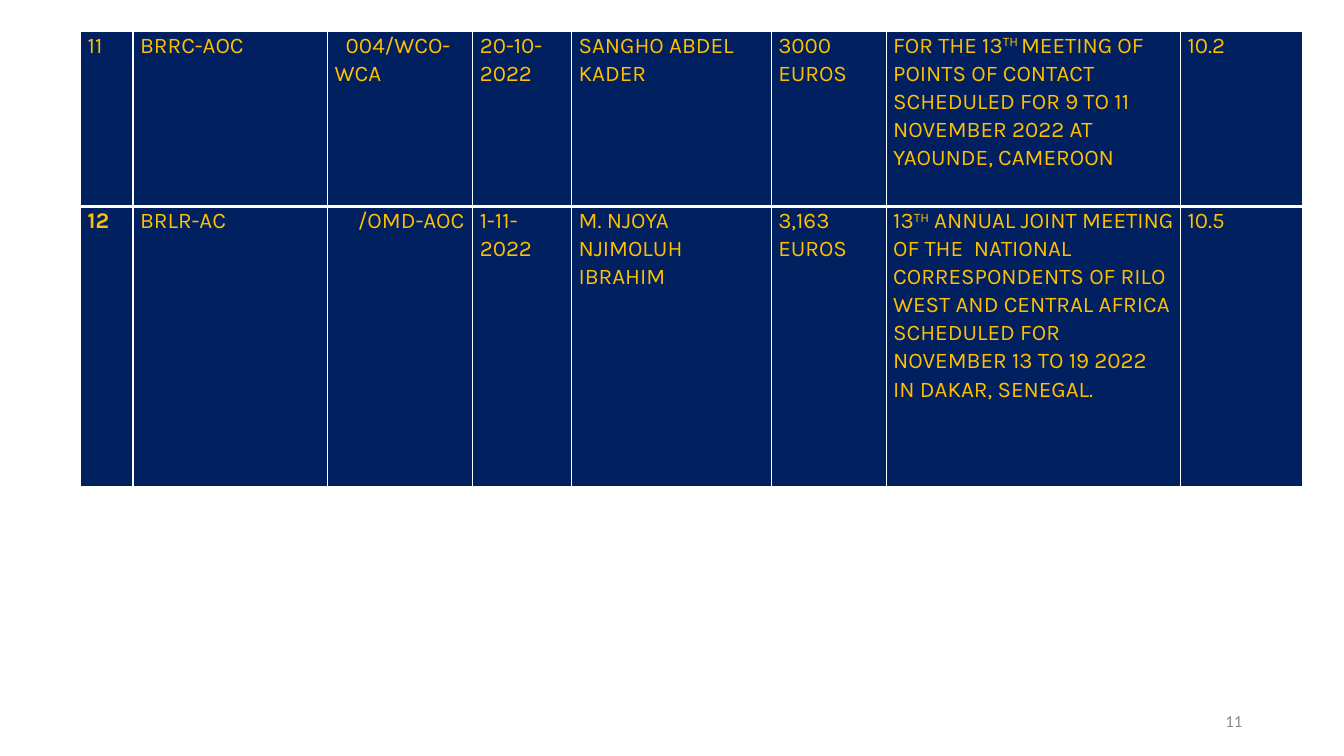
from lxml.etree import SubElement
from pptx import Presentation
from pptx.dml.color import RGBColor
from pptx.enum.text import MSO_ANCHOR, PP_ALIGN
from pptx.oxml.ns import qn
from pptx.util import Emu, Pt

PX = 9144  # 100 px to the inch
COLORS = {"navy": "002060", "gold": "FFC000", "white": "FFFFFF", "grey": "8C8C8C"}
COLUMN_WIDTHS = [52, 193, 144, 98, 198, 114, 292, 121]
ROW_HEIGHTS = [174, 278]
REFERENCE_COLUMN = 2
REFERENCE_INDENTS = [11, 23]
# Each cell is a list of runs; every second run is a superscript.
MISSIONS = [
    [["11"], ["BRRC-AOC"], ["004/WCO-WCA"], ["20-10-2022"],
     ["SANGHO ABDEL KADER"], ["3000 EUROS"],
     ["FOR THE 13", "TH ", "MEETING OF POINTS OF CONTACT SCHEDULED FOR 9 TO 11 "
      "NOVEMBER 2022 AT YAOUNDE, CAMEROON"],
     ["10.2"]],
    [["12"], ["BRLR-AC"], ["/OMD-AOC"], ["1-11-2022"],
     ["M. NJOYA NJIMOLUH IBRAHIM"], ["3,163 EUROS"],
     ["13", "TH", " ANNUAL JOINT MEETING OF THE  NATIONAL CORRESPONDENTS OF RILO "
      "WEST AND CENTRAL AFRICA SCHEDULED FOR NOVEMBER 13 TO 19 2022 IN DAKAR, SENEGAL."],
     ["10.5"]],
]


def px(length):
    return Emu(length * PX)


def add_span(para, text, font, size, color, bold=False):
    span = para.add_run()
    span.text = text
    span.font.name = font
    span.font.size = Pt(size)
    span.font.bold = bold
    span.font.color.rgb = RGBColor.from_string(COLORS[color])
    return span


def set_borders(cell, widths):
    """Draw white borders; widths maps L, R, T, B (in that order) to points."""
    properties = cell._tc.get_or_add_tcPr()
    for side, width in widths.items():
        line = SubElement(properties, qn(f"a:ln{side}"), w=str(Pt(width)))
        fill = SubElement(line, qn("a:solidFill"))
        SubElement(fill, qn("a:srgbClr"), val=COLORS["white"])


def fill_cell(cell, texts, bold, indent):
    cell.fill.solid()
    cell.fill.fore_color.rgb = RGBColor.from_string(COLORS["navy"])
    cell.margin_left = cell.margin_right = px(7)
    cell.margin_top = cell.margin_bottom = 0
    para = cell.text_frame.paragraphs[0]
    para.line_spacing = 1.07
    if indent:
        para._p.get_or_add_pPr().set("indent", str(px(indent)))
    for position, text in enumerate(texts):
        span = add_span(para, text, "Karla", 16, "gold", bold)
        if position % 2:
            span.font._element.set("baseline", "30000")


def add_mission_table(page):
    frame = page.shapes.add_table(
        len(ROW_HEIGHTS), len(COLUMN_WIDTHS), px(80), px(31),
        px(sum(COLUMN_WIDTHS)), px(sum(ROW_HEIGHTS)))
    table = frame.table
    table.first_row = table.horz_banding = False
    for column, width in zip(table.columns, COLUMN_WIDTHS):
        column.width = px(width)
    for row_index, mission in enumerate(MISSIONS):
        table.rows[row_index].height = px(ROW_HEIGHTS[row_index])
        first = row_index == 0
        borders = {"L": 1, "R": 1, "T": 1 if first else 3, "B": 3 if first else 1}
        for column_index, texts in enumerate(mission):
            cell = table.cell(row_index, column_index)
            set_borders(cell, borders)
            indent = REFERENCE_INDENTS[row_index] if column_index == REFERENCE_COLUMN else 0
            fill_cell(cell, texts, not first and column_index == 0, indent)


def add_page_number(page, number):
    box = page.shapes.add_textbox(px(942), px(695), px(300), px(40))
    box.text_frame.word_wrap = True
    box.text_frame.vertical_anchor = MSO_ANCHOR.MIDDLE
    para = box.text_frame.paragraphs[0]
    para.alignment = PP_ALIGN.RIGHT
    add_span(para, number, "Calibri", 12, "grey")


def main():
    deck = Presentation()
    deck.slide_width, deck.slide_height = px(1333), px(750)
    page = deck.slides.add_slide(deck.slide_layouts[6])
    add_mission_table(page)
    add_page_number(page, "11")
    deck.save("out.pptx")


if __name__ == "__main__":
    main()
